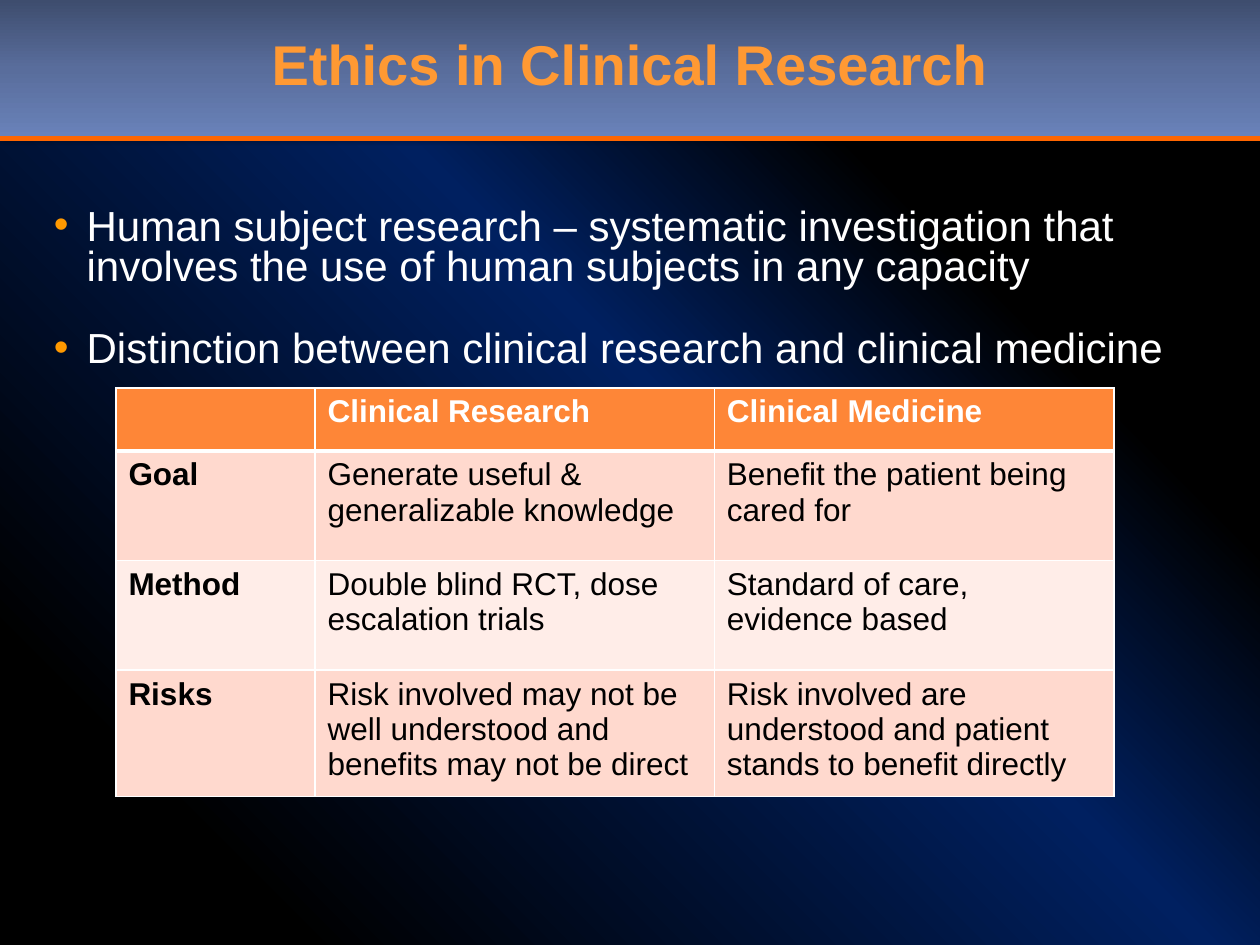
"""Builds the slide on ethics in clinical research."""
import copy
from dataclasses import dataclass

import lxml.etree
import pptx
import pptx.dml.color
import pptx.enum.shapes
import pptx.enum.text
import pptx.oxml
import pptx.oxml.ns
import pptx.util

Inches = pptx.util.Inches
Pt = pptx.util.Pt
qn = pptx.oxml.ns.qn

FONT = "Arial"
WHITE, BLACK = "FFFFFF", "000000"
HEADER_FILL = "FE8637"
BAND_FILLS = ("FFD9CE", "FFEDE8")
COLUMN_WIDTHS = (1.58, 3.17, 3.17)
BULLETS = (
    "Human subject research – systematic investigation that involves the use of human subjects in any capacity",
    "Distinction between clinical research and clinical medicine",
)


@dataclass
class ComparisonRow:
    aspect: str
    research: str
    medicine: str
    height: float


ROWS = (
    ComparisonRow("", "Clinical Research", "Clinical Medicine", 0.5),
    ComparisonRow("Goal", "Generate useful & generalizable knowledge",
                  "Benefit the patient being cared for", 0.87),
    ComparisonRow("Method", "Double blind RCT, dose escalation trials",
                  "Standard of care, evidence based", 0.87),
    ComparisonRow("Risks", "Risk involved may not be well understood and benefits may not be direct",
                  "Risk involved are understood and patient stands to benefit directly", 0.94),
)


def rgb(value: str) -> pptx.dml.color.RGBColor:
    return pptx.dml.color.RGBColor.from_string(value)


def set_gradient(fill, stops: tuple, angle: float) -> None:
    fill.gradient()
    fill.gradient_angle = angle
    first = fill.gradient_stops[0]._gs
    first.addnext(copy.deepcopy(first))
    for stop, (position, color) in zip(fill.gradient_stops, stops):
        stop.color.rgb = rgb(color)
        stop.position = position


def make_shadow(blur: float, distance: float, angle: int, opacity: int):
    return pptx.oxml.parse_xml(
        f'<a:effectLst {pptx.oxml.ns.nsdecls("a")}>'
        f'<a:outerShdw blurRad="{Pt(blur)}" dist="{Pt(distance)}" dir="{angle * 60000}" rotWithShape="0">'
        f'<a:srgbClr val="{BLACK}"><a:alpha val="{opacity * 1000}"/></a:srgbClr>'
        '</a:outerShdw></a:effectLst>')


def add_run(paragraph, text: str, size: float, color: str, bold: bool = False):
    run = paragraph.add_run()
    run.text = text
    run.font.name = FONT
    run.font.size = Pt(size)
    run.font.bold = bold
    run.font.color.rgb = rgb(color)
    return run


def add_bullet(paragraph, color: str) -> None:
    properties = paragraph._p.get_or_add_pPr()
    properties.set("marL", str(Inches(0.26)))
    properties.set("indent", str(-Inches(0.26)))
    bullet_color = lxml.etree.SubElement(properties, qn("a:buClr"))
    lxml.etree.SubElement(bullet_color, qn("a:srgbClr"), val=color)
    lxml.etree.SubElement(properties, qn("a:buFont"), typeface=FONT)
    lxml.etree.SubElement(properties, qn("a:buChar"), char="•")


def set_borders(cell, top: float, bottom: float) -> None:
    properties = cell._tc.get_or_add_tcPr()
    for side, width in (("L", 1), ("R", 1), ("T", top), ("B", bottom)):
        border = lxml.etree.SubElement(properties, qn(f"a:ln{side}"), w=str(Pt(width)))
        solid = lxml.etree.SubElement(border, qn("a:solidFill"))
        lxml.etree.SubElement(solid, qn("a:srgbClr"), val=WHITE)


def add_header(slide) -> None:
    band = slide.shapes.add_shape(
        pptx.enum.shapes.MSO_SHAPE.RECTANGLE, 0, 0, Inches(10), Inches(1.09))
    set_gradient(band.fill, ((0, "3E4D6E"), (0.5, "596D9C"), (1, "6982B9")), 270)
    band.line.fill.background()
    band.shadow.inherit = False
    effects = band._element.spPr.find(qn("a:effectLst"))
    effects.getparent().replace(effects, make_shadow(3.1, 1.8, 90, 35))

    rule = slide.shapes.add_connector(
        pptx.enum.shapes.MSO_CONNECTOR.STRAIGHT, 0, Inches(1.1), Inches(10), Inches(1.1))
    rule.line.color.rgb = rgb("FF6600")
    rule.line.width = Pt(3)
    lxml.etree.SubElement(rule._element.spPr, qn("a:effectLst"))

    title = slide.shapes.add_textbox(0, 0, Inches(10), Inches(1.09)).text_frame
    title.word_wrap = True
    title.vertical_anchor = pptx.enum.text.MSO_ANCHOR.MIDDLE
    heading = title.paragraphs[0]
    heading.alignment = pptx.enum.text.PP_ALIGN.CENTER
    heading.line_spacing = 0.85
    run = add_run(heading, "Ethics in Clinical Research", 32, "FF9933", True)
    run._r.rPr.find(qn("a:solidFill")).addnext(make_shadow(0, 2.5, 45, 100))


def add_bullets(slide) -> None:
    body = slide.shapes.add_textbox(
        Inches(0.33), Inches(1.61), Inches(9.33), Inches(4.81)).text_frame
    body.word_wrap = True
    for index, text in enumerate(BULLETS):
        paragraph = body.add_paragraph() if index else body.paragraphs[0]
        add_bullet(paragraph, "FF9900")
        paragraph.line_spacing = 0.8
        paragraph.space_before = Pt(24 if index else 0)
        add_run(paragraph, text, 24, WHITE)


def add_comparison(slide) -> None:
    comparison = slide.shapes.add_table(
        len(ROWS), len(COLUMN_WIDTHS), Inches(0.92), Inches(3.08),
        Inches(sum(COLUMN_WIDTHS)), Inches(sum(row.height for row in ROWS))).table
    for column, width in zip(comparison.columns, COLUMN_WIDTHS):
        column.width = Inches(width)
    for r, row in enumerate(ROWS):
        comparison.rows[r].height = Inches(row.height)
        is_header = r == 0
        for c, text in enumerate((row.aspect, row.research, row.medicine)):
            cell = comparison.cell(r, c)
            set_borders(cell, 3 if r == 1 else 1, 3 if is_header else 1)
            cell.fill.solid()
            cell.fill.fore_color.rgb = rgb(HEADER_FILL if is_header else BAND_FILLS[(r - 1) % 2])
            if text:
                add_run(cell.text_frame.paragraphs[0], text, 18,
                        WHITE if is_header else BLACK, is_header or c == 0)


def main() -> None:
    presentation = pptx.Presentation()
    presentation.slide_width = Inches(10)
    presentation.slide_height = Inches(7.5)
    slide = presentation.slides.add_slide(presentation.slide_layouts[6])
    set_gradient(slide.background.fill, ((0.14, BLACK), (0.55, "002060"), (0.75, BLACK)), 45)
    add_header(slide)
    add_bullets(slide)
    add_comparison(slide)
    presentation.save("out.pptx")


if __name__ == "__main__":
    main()
